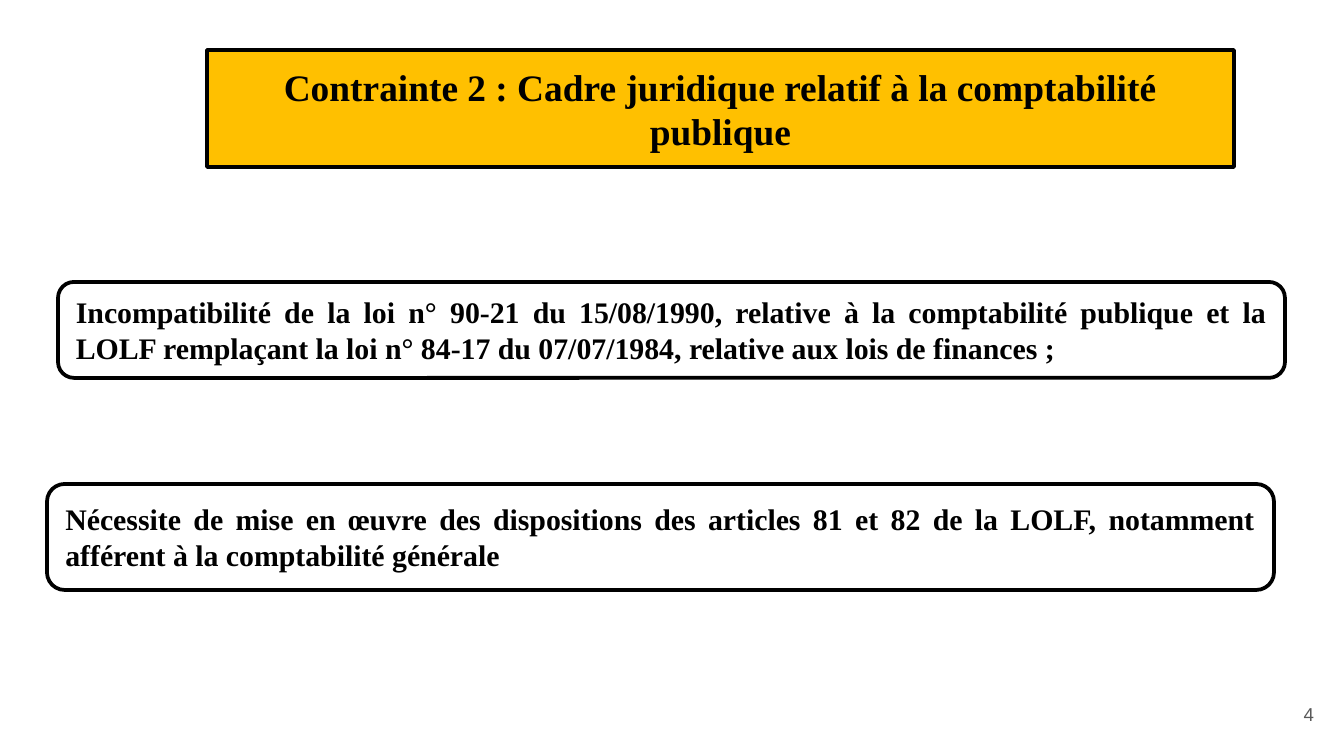
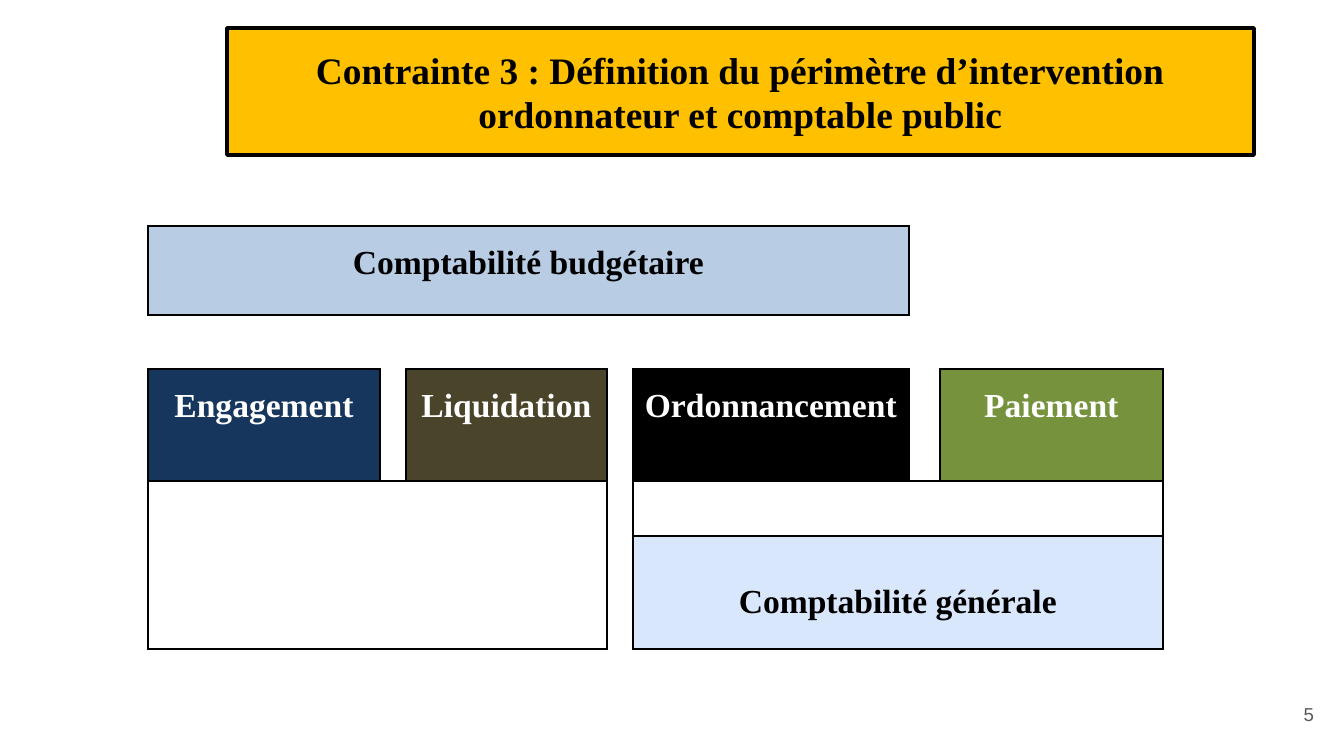
from lxml.etree import SubElement
from pptx import Presentation
from pptx.dml.color import RGBColor
from pptx.enum.shapes import MSO_SHAPE
from pptx.enum.text import MSO_ANCHOR, MSO_AUTO_SIZE, PP_ALIGN
from pptx.oxml import parse_xml
from pptx.oxml.ns import nsdecls, qn
from pptx.util import Emu, Pt

SCALE = 9144000 / 1344
WIDTH, HEIGHT = 1344, 756
BLACK, WHITE, GOLD = "000000", "FFFFFF", "FFC000"
SERIF = {"name": "Times New Roman", "bold": True}
PLAIN = {"name": "Arial", "bold": False}
PLAIN_GRID = "{2D5ABB26-0587-4C30-8999-92F81FD0307C}"
COLS = [232, 26, 201, 26, 276, 31, 223]
ROWS = [89, 54, 112, 55, 113]
BLOCKS = [
    (0, 0, 0, 4, "B8CCE4", BLACK, "Comptabilité budgétaire"),
    (2, 0, 2, 0, "17365D", WHITE, "Engagement"),
    (2, 2, 2, 2, "4A442A", WHITE, "Liquidation"),
    (2, 4, 2, 4, BLACK, WHITE, "Ordonnancement"),
    (2, 6, 2, 6, "76923C", WHITE, "Paiement"),
    (3, 0, 4, 2, WHITE, BLACK, ""),
    (3, 4, 3, 6, WHITE, BLACK, ""),
    (4, 4, 4, 6, "D9E7FD", BLACK, "Comptabilité générale"),
]


def px(num):
    """Turn px into EMU."""
    return Emu(round(num * SCALE))


def rgb(code):
    """Turn a hex string into a colour."""
    return RGBColor.from_string(code)


def put(item, vals):
    """Set each attribute of item from a dict."""
    for key, val in vals.items():
        setattr(item, key, val)


def place(item, rect):
    """Move and size an item by a px rectangle."""
    put(item, dict(zip(("left", "top", "width", "height"), map(px, rect))))


def write(frame, text, face, size, tint, align, **more):
    """Write one formatted paragraph in a text frame."""
    para = frame.paragraphs[0]
    put(para, {"alignment": align, **more})
    run = para.add_run()
    run.text = text
    put(run.font, {**face, "size": Pt(size)})
    run.font.color.rgb = rgb(tint)


def paint(shape, fill):
    """Give a shape its fill and thick black outline."""
    shape.fill.solid()
    shape.fill.fore_color.rgb = rgb(fill)
    shape.line.color.rgb = rgb(BLACK)
    shape.line.width = Pt(2)


def banner(slide, rect, text):
    """Turn the title placeholder into a rounded gold banner."""
    title = slide.shapes.title
    place(title, rect)
    title._element.spPr.append(parse_xml(
        f'<a:prstGeom {nsdecls("a")} prst="roundRect"><a:avLst/></a:prstGeom>'))
    paint(title, GOLD)
    frame = title.text_frame
    put(frame, {"word_wrap": True, "auto_size": MSO_AUTO_SIZE.NONE,
                "vertical_anchor": MSO_ANCHOR.MIDDLE})
    write(frame, text, SERIF, 20, BLACK, PP_ALIGN.CENTER)


def panel(slide, rect, text):
    """Add a white rounded panel with justified text."""
    shape = slide.shapes.add_shape(MSO_SHAPE.ROUNDED_RECTANGLE, *map(px, rect))
    shape.shadow.inherit = False
    paint(shape, WHITE)
    put(shape.text_frame, {"word_wrap": True,
                           "vertical_anchor": MSO_ANCHOR.MIDDLE})
    write(shape.text_frame, text, SERIF, 16, BLACK, PP_ALIGN.JUSTIFY)


def folio(slide, num):
    """Add the page number."""
    box = slide.shapes.add_textbox(*map(px, (1246, 685, 81, 58)))
    put(box.text_frame, {"word_wrap": True,
                         "vertical_anchor": MSO_ANCHOR.MIDDLE})
    write(box.text_frame, str(num), PLAIN, 10, "595959", PP_ALIGN.RIGHT)


def border(cell):
    """Draw a thin black line on all four sides of a cell."""
    props = cell._tc.get_or_add_tcPr()
    for side in "LRTB":
        line = SubElement(props, qn(f"a:ln{side}"), w=str(Pt(1)))
        fill = SubElement(line, qn("a:solidFill"))
        SubElement(fill, qn("a:srgbClr"), val=BLACK)


def block(table, top, left, low, right, fill, tint, text):
    """Fill one outlined block of the table."""
    cell = table.cell(top, left)
    if (top, left) != (low, right):
        cell.merge(table.cell(low, right))
    for row in range(top, low + 1):
        for col in range(left, right + 1):
            border(table.cell(row, col))
    cell.fill.solid()
    cell.fill.fore_color.rgb = rgb(fill)
    if text:
        last = low == len(ROWS) - 1
        cell.vertical_anchor = MSO_ANCHOR.MIDDLE if last else MSO_ANCHOR.TOP
        write(cell.text_frame, text, SERIF, 18, tint, PP_ALIGN.CENTER,
              line_spacing=1.5, space_before=Pt(0 if last else 18))


def grid(slide, left, top):
    """Add the table of accounting stages."""
    rect = left, top, sum(COLS), sum(ROWS)
    table = slide.shapes.add_table(
        len(ROWS), len(COLS), *map(px, rect)).table
    put(table, {"first_row": False, "horz_banding": False})
    table._tbl.tblPr.find(qn("a:tableStyleId")).text = PLAIN_GRID
    for col, size in zip(table.columns, COLS):
        col.width = px(size)
    for row, size in zip(table.rows, ROWS):
        row.height = px(size)
    for cell in table.iter_cells():
        put(cell, {"margin_left": px(8), "margin_right": px(8),
                   "margin_top": 0, "margin_bottom": 0})
    for part in BLOCKS:
        block(table, *part)
    for cell in table.iter_cells():
        if cell.fill.type is None:
            cell.fill.background()


def page(deck, num, rect, text):
    """Add a slide with its banner and page number."""
    slide = deck.slides.add_slide(deck.slide_layouts[5])
    banner(slide, rect, text)
    folio(slide, num)
    return slide


def main():
    """Build and save the deck."""
    deck = Presentation()
    put(deck, {"slide_width": px(WIDTH), "slide_height": px(HEIGHT)})
    law = page(deck, 4, (207, 50, 1027, 117),
               "Contrainte 2 : Cadre juridique relatif à la comptabilité "
               "publique")
    panel(law, (58, 282, 1227, 96),
          "Incompatibilité de la loi n° 90-21 du 15/08/1990, relative à la "
          "comptabilité publique et la LOLF remplaçant la loi n° 84-17 du "
          "07/07/1984, relative aux lois de finances ;")
    panel(law, (47, 484, 1227, 106),
          "Nécessite de mise en œuvre des dispositions des articles 81 et 82 "
          "de la LOLF, notamment afférent à la comptabilité générale")
    scope = page(deck, 5, (227, 28, 1027, 127),
                 "Contrainte 3 : Définition du périmètre d’intervention "
                 "ordonnateur et comptable public")
    grid(scope, 148, 226)
    deck.save("out.pptx")


if __name__ == "__main__":
    main()
